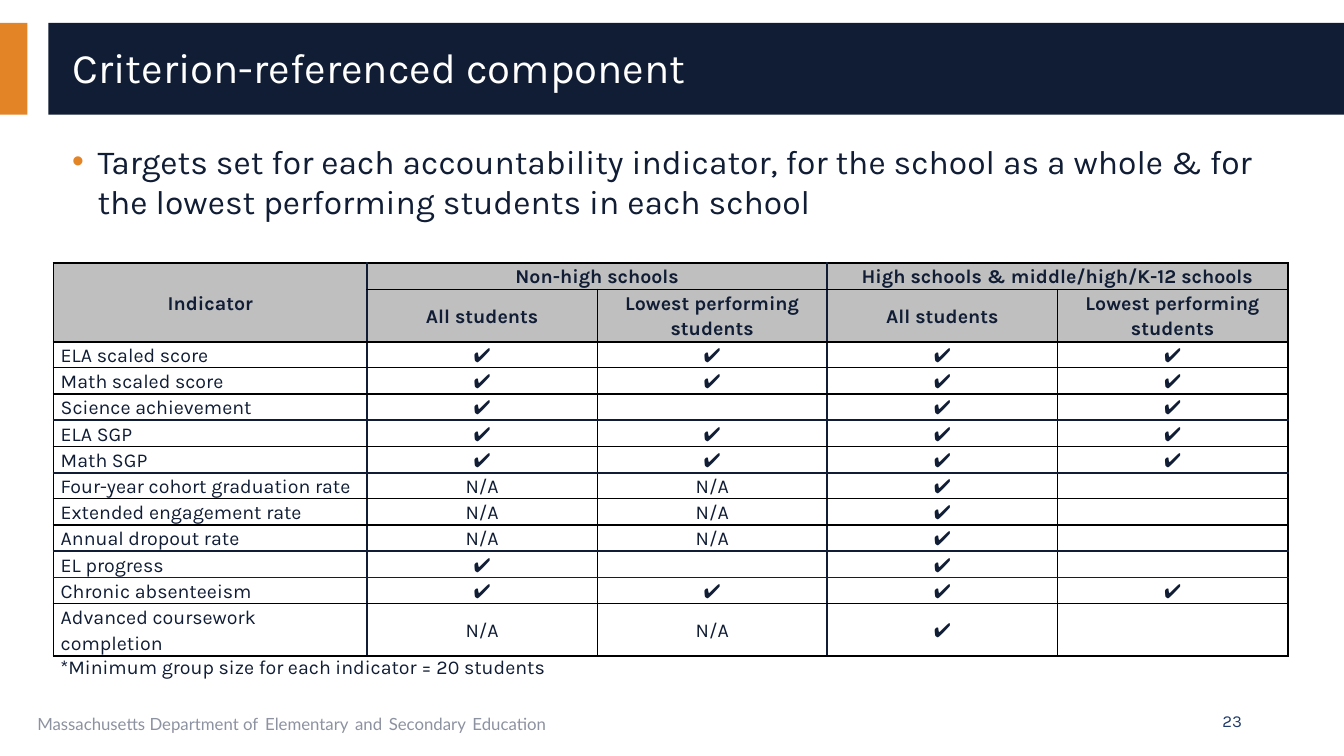
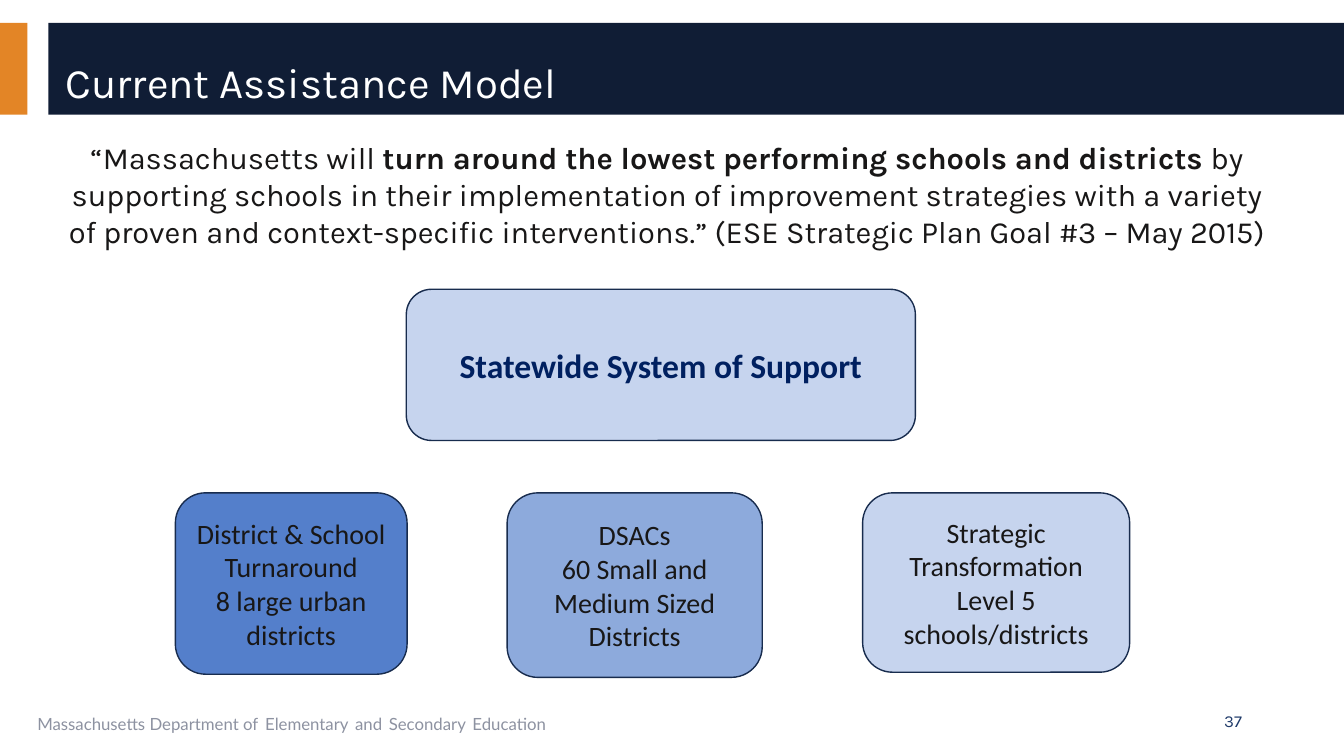
from dataclasses import dataclass

from lxml.etree import SubElement
from pptx import Presentation
from pptx.dml.color import RGBColor
from pptx.enum.shapes import MSO_SHAPE
from pptx.enum.text import MSO_ANCHOR, MSO_AUTO_SIZE, PP_ALIGN
from pptx.oxml.ns import qn
from pptx.util import Cm, Pt

# Shared look
NAVY, ORANGE, BLUE, GREY = "101D35", "E38526", "203B6A", "8D92A1"
INK, EDGE, DEEP, PALE = "181717", "182C4E", "002060", "C6D4EE"
BLACK, WHITE, SILVER = "000000", "FFFFFF", "BFBFBF"
LEFT, MID, RIGHT = PP_ALIGN.LEFT, PP_ALIGN.CENTER, PP_ALIGN.RIGHT
FACE = "Karla"


@dataclass
class Box:
    x: float
    y: float
    w: float
    h: float

    def cm(self) -> tuple:
        return Cm(self.x), Cm(self.y), Cm(self.w), Cm(self.h)


@dataclass
class Font:
    size: float
    color: str
    face: str = FACE
    bold: bool = False


@dataclass
class Card:
    box: Box
    fill: str
    lines: list[str]
    font: Font


def rgb(code: str) -> RGBColor:
    return RGBColor.from_string(code)


def add_run(para, text: str, font: Font) -> None:
    run = para.add_run()
    run.text = text
    run.font.size = Pt(font.size)
    run.font.name = font.face
    run.font.bold = font.bold
    run.font.color.rgb = rgb(font.color)


def add_text(slide, box: Box, runs: list, align=LEFT, anchor=MSO_ANCHOR.TOP):
    frame = slide.shapes.add_textbox(*box.cm()).text_frame
    frame.word_wrap = True
    frame.vertical_anchor = anchor
    para = frame.paragraphs[0]
    para.alignment = align
    for text, font in runs:
        add_run(para, text, font)
    return para


def add_block(slide, kind, box: Box, fill: str, line: str = ""):
    shape = slide.shapes.add_shape(kind, *box.cm())
    shape.shadow.inherit = False
    shape.fill.solid()
    shape.fill.fore_color.rgb = rgb(fill)
    if line:
        shape.line.color.rgb = rgb(line)
        shape.line.width = Pt(1)
    else:
        shape.line.fill.background()
    return shape


def add_card(slide, card: Card) -> None:
    shape = add_block(slide, MSO_SHAPE.ROUNDED_RECTANGLE, card.box, card.fill, EDGE)
    frame = shape.text_frame
    frame.word_wrap = True
    frame.vertical_anchor = MSO_ANCHOR.MIDDLE
    for i, line in enumerate(card.lines):
        para = frame.add_paragraph() if i else frame.paragraphs[0]
        para.alignment = MID
        add_run(para, line, card.font)


def add_slide(deck, title: str, box: Box, gap: float, num: str):
    """Add a slide with bands, title, footer and number."""
    slide = deck.slides.add_slide(deck.slide_layouts[5])
    for band, fill in ((Box(0, 0.58, 0.69, 2.31), ORANGE),
                       (Box(1.22, 0.58, 32.65, 2.31), NAVY)):
        add_block(slide, MSO_SHAPE.RECTANGLE, band, fill)

    # Title, raised above the bands
    head = slide.shapes.title
    head.element.getparent().append(head.element)
    head.left, head.top, head.width, head.height = box.cm()
    frame = head.text_frame
    frame.word_wrap = True
    frame.auto_size = MSO_AUTO_SIZE.NONE
    frame.vertical_anchor = MSO_ANCHOR.MIDDLE
    para = frame.paragraphs[0]
    para.alignment = LEFT
    para.line_spacing = gap
    add_run(para, title, Font(30, WHITE))

    # Footer, with wider spaces between the last words
    word, space = Font(12, GREY, "Lato"), Font(18, BLUE, "Lato")
    runs = [("Massachusetts Department of", word)]
    for text in ("Elementary", "and", "Secondary", "Education"):
        runs += [(" ", space), (text, word)]
    add_text(slide, Box(0.69, 17.65, 21.44, 1.02), runs)
    add_text(slide, Box(23.93, 17.65, 7.62, 1.02), [(num, Font(12, BLUE))],
             RIGHT, MSO_ANCHOR.MIDDLE)
    return slide


# Indicator table
YES, NA = "✔", "N/A"
HEADS = [
    ["Indicator", "Non-high schools", "", "High schools & middle/high/K-12 schools", ""],
    ["", *["All students", "Lowest performing students"] * 2],
]
ROWS = HEADS + [
    ["ELA scaled score", YES, YES, YES, YES],
    ["Math scaled score", YES, YES, YES, YES],
    ["Science achievement", YES, "", YES, YES],
    ["ELA SGP", YES, YES, YES, YES],
    ["Math SGP", YES, YES, YES, YES],
    ["Four-year cohort graduation rate", NA, NA, YES, ""],
    ["Extended engagement rate", NA, NA, YES, ""],
    ["Annual dropout rate", NA, NA, YES, ""],
    ["EL progress", YES, "", YES, ""],
    ["Chronic absenteeism", YES, YES, YES, YES],
    ["Advanced coursework completion", NA, NA, YES, ""],
]
COLS = [7.9] + [5.8] * 4
TALL = (1, len(ROWS) - 1)
SPANS = [((0, 0), (1, 0)), ((0, 1), (0, 2)), ((0, 3), (0, 4))]
# Grid lines by index: thick black, thick navy, the rest thin black
THICK_H, NAVY_H = (0, 2, len(ROWS)), (5, 7, 10, 11)
THICK_V, NAVY_V = (0, len(COLS)), (1, 3)
# Lines inside merged cells: (line, column) and (row, line)
SKIP_H, SKIP_V = [(1, 0)], [(0, 2), (0, 4)]


def add_edge(cell, side: str, line: int, thick: tuple, navy: tuple) -> None:
    width = 1.5 if line in thick + navy else 1
    edge = SubElement(cell._tc.get_or_add_tcPr(), qn("a:ln" + side), w=str(Pt(width)))
    fill = SubElement(edge, qn("a:solidFill"))
    SubElement(fill, qn("a:srgbClr"), val=NAVY if line in navy else BLACK)


def add_edges(cell, row: int, col: int) -> None:
    wide = cell.span_width if cell.is_merge_origin else 1
    deep = cell.span_height if cell.is_merge_origin else 1
    for side, line in (("L", col), ("R", col + wide)):
        if (row, line) not in SKIP_V:
            add_edge(cell, side, line, THICK_V, NAVY_V)
    for side, line in (("T", row), ("B", row + deep)):
        if (line, col) not in SKIP_H:
            add_edge(cell, side, line, THICK_H, NAVY_H)


def add_grid(slide) -> None:
    highs = [1.32 if i in TALL else 0.66 for i in range(len(ROWS))]
    box = Box(1.35, 6.63, sum(COLS), sum(highs))
    table = slide.shapes.add_table(len(ROWS), len(COLS), *box.cm()).table
    table.first_row = table.horz_banding = False
    # Plain style without grid
    style = table._tbl.tblPr.find(qn("a:tableStyleId"))
    style.text = "{2D5ABB26-0587-4C30-8999-92F81FD0307C}"
    for col, width in zip(table.columns, COLS):
        col.width = Cm(width)
    for row, high in zip(table.rows, highs):
        row.height = Cm(high)
    for start, end in SPANS:
        table.cell(*start).merge(table.cell(*end))

    for r, row in enumerate(ROWS):
        top = r < len(HEADS)
        for c, text in enumerate(row):
            cell = table.cell(r, c)
            cell.margin_left = cell.margin_right = Cm(0.18)
            cell.margin_top = cell.margin_bottom = 0
            cell.vertical_anchor = MSO_ANCHOR.MIDDLE
            add_edges(cell, r, c)
            if top:
                cell.fill.solid()
                cell.fill.fore_color.rgb = rgb(SILVER)
            else:
                cell.fill.background()
            para = cell.text_frame.paragraphs[0]
            para.alignment = MID if top or c else LEFT
            # Tight enough for the text to stay within the row height
            para.line_spacing = 1.1
            if text:
                add_run(para, text, Font(14, NAVY, bold=top))
            else:
                mark = SubElement(para._p, qn("a:endParaRPr"), sz="1400")
                SubElement(mark, qn("a:latin"), typeface=FACE)


def add_bullet(para) -> None:
    props = para._p.get_or_add_pPr()
    props.set("marL", str(Cm(0.64)))
    props.set("indent", str(-Cm(0.64)))
    SubElement(SubElement(props, qn("a:buClr")), qn("a:srgbClr"), val=ORANGE)
    SubElement(props, qn("a:buFont"), typeface="Arial")
    SubElement(props, qn("a:buChar"), char="•")


def add_targets(deck) -> None:
    slide = add_slide(deck, "Criterion-referenced component",
                      Box(1.57, 0.81, 31.6, 1.88), 0.9, "23")
    para = add_text(slide, Box(1.57, 3.43, 31.6, 3), [
        ("Targets set for each accountability indicator, for the school as a whole "
         "& for the lowest performing students in each school", Font(24, NAVY))])
    add_bullet(para)
    add_grid(slide)
    add_text(slide, Box(1.27, 16.38, 25.65, 0.86), [
        ("*Minimum group size for each indicator = 20 students", Font(14, NAVY))])


def add_model(deck) -> None:
    slide = add_slide(deck, "Current Assistance Model",
                      Box(1.4, 0.53, 31.6, 2.41), 1.5, "37")
    plain = Font(22, INK)
    add_text(slide, Box(1.4, 3.38, 30.81, 4.11), [
        ("“Massachusetts will ", plain),
        ("turn around the lowest performing schools and districts ",
         Font(22, INK, bold=True)),
        ("by supporting schools in their implementation of improvement strategies "
         "with a variety of proven and context-specific interventions.” "
         "(ESE Strategic Plan Goal #3 – May 2015)", plain)], MID)

    # System above its three parts
    small = Font(20, INK, "Calibri")
    row = 12.42
    cards = [
        Card(Box(10.24, 7.29, 12.83, 3.81), PALE, ["Statewide System of Support"],
             Font(24, DEEP, "Calibri", True)),
        Card(Box(4.42, row, 5.84, 4.57), "547FCB",
             ["District & School Turnaround", "8 large urban districts"], small),
        Card(Box(12.78, row, 6.43, 4.65), "8DAADC",
             ["DSACs", "60 Small and Medium Sized Districts"], small),
        Card(Box(21.74, row, 6.73, 4.52), PALE,
             ["Strategic Transformation", "Level 5 schools/districts"], small),
    ]
    for card in cards:
        add_card(slide, card)


def main() -> None:
    deck = Presentation()
    deck.slide_width, deck.slide_height = Cm(33.87), Cm(19.05)
    add_targets(deck)
    add_model(deck)
    deck.save("out.pptx")


if __name__ == "__main__":
    main()
